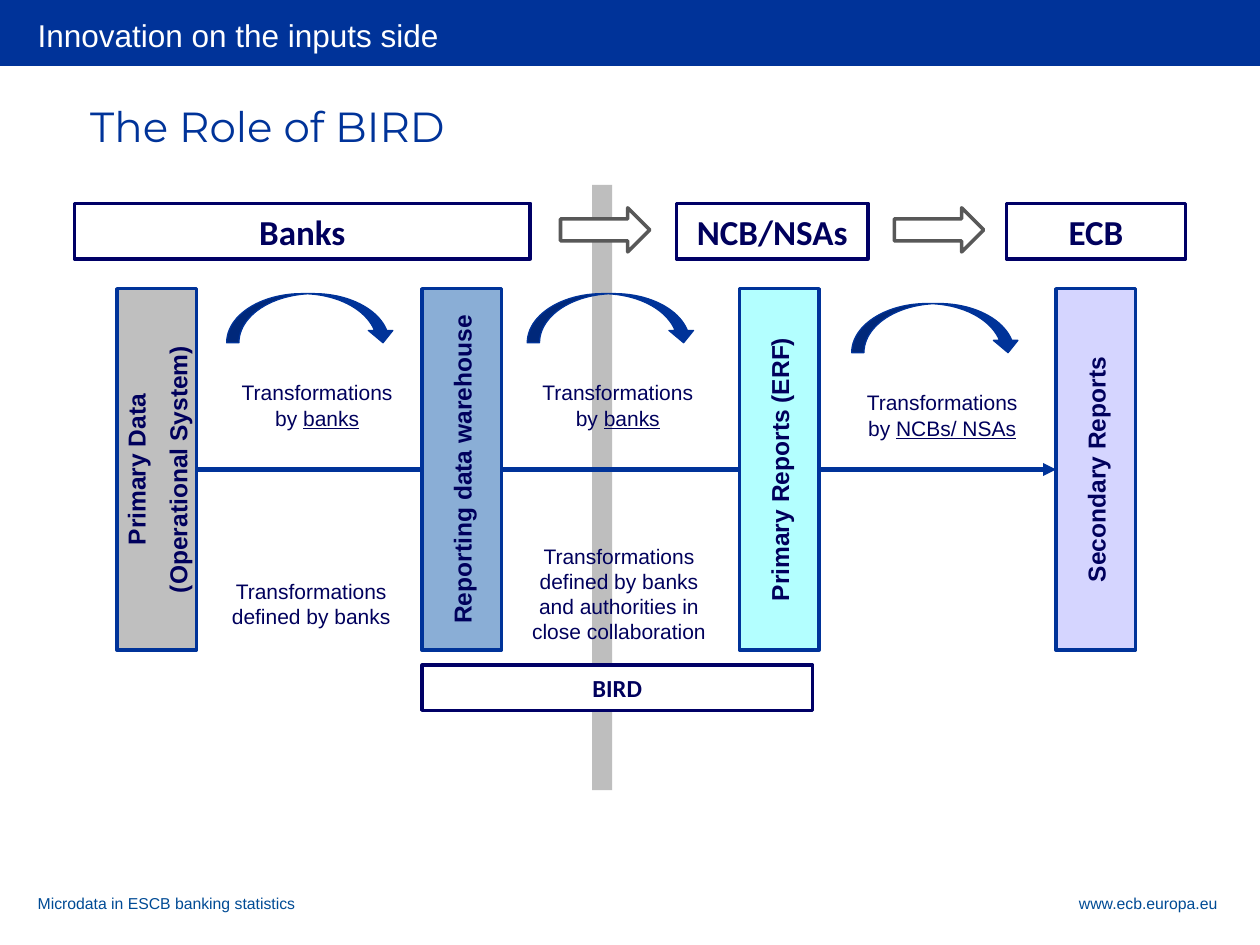
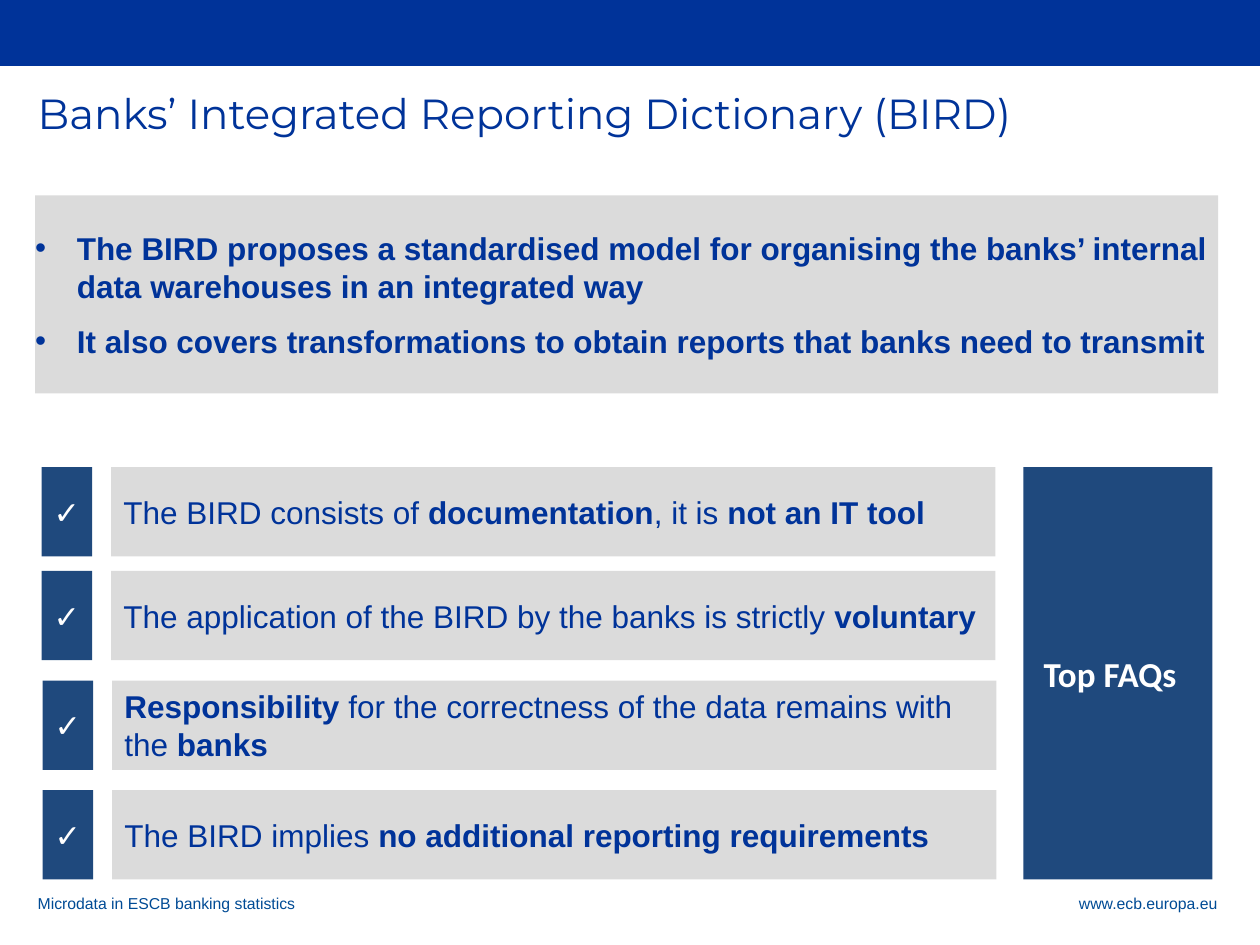
import dataclasses

import pptx
import pptx.dml.color
import pptx.enum.shapes
import pptx.enum.text
import pptx.oxml.ns
import pptx.util
from lxml import etree

Cm = pptx.util.Cm
Pt = pptx.util.Pt
Color = pptx.dml.color.RGBColor
Preset = pptx.enum.shapes.MSO_SHAPE
Align = pptx.enum.text.PP_ALIGN
Anchor = pptx.enum.text.MSO_ANCHOR
qn = pptx.oxml.ns.qn

WHITE = Color(0xFF, 0xFF, 0xFF)
BLUE = Color(0x00, 0x33, 0x99)
FOOTER_BLUE = Color(0x00, 0x4B, 0x95)
INK = Color(0x00, 0x00, 0x5C)
FRAME_NAVY = Color(0x00, 0x00, 0x66)
FAQ_NAVY = Color(0x1F, 0x49, 0x7D)
PANEL_GREY = Color(0xDB, 0xDB, 0xDB)
DIVIDER_GREY = Color(0xBE, 0xBE, 0xBE)
ARROW_GREY = Color(0x58, 0x58, 0x58)
PRIMARY_GREY = Color(0xBF, 0xBF, 0xBF)
WAREHOUSE_BLUE = Color(0x8A, 0xAE, 0xD6)
REPORT_CYAN = Color(0xB3, 0xFF, 0xFF)
SECONDARY_LILAC = Color(0xD5, 0xD5, 0xFF)

BODY_FONT = "Arial"
LABEL_FONT = "Calibri"
TITLE_FONT = "Montserrat"
NO_INSETS = (0, 0, 0, 0)
TEXT_INSETS = (0.25, 0.13, 0.25, 0.13)


@dataclasses.dataclass
class Box:
    left: float
    top: float
    width: float
    height: float

    def area(self, left, top, width, height):
        return Box(self.left + left, self.top + top, width, height)

    def lengths(self):
        return [Cm(value) for value in dataclasses.astuple(self)]


def add_text(shape, text, size=18, color=BLUE, font=BODY_FONT, bold=False,
             emphasis="bold", align=Align.LEFT, anchor=Anchor.MIDDLE,
             insets=TEXT_INSETS, wrap=True, spacing=None, gap=0, bullet=None):
    frame = shape.text_frame
    frame.word_wrap = wrap
    frame.vertical_anchor = anchor
    (frame.margin_left, frame.margin_top,
     frame.margin_right, frame.margin_bottom) = [Cm(inset) for inset in insets]
    for index, line in enumerate(text.split("\n")):
        para = frame.add_paragraph() if index else frame.paragraphs[0]
        para.alignment = align
        para.line_spacing = spacing
        para.space_before = Pt(gap if index else 0)
        if bullet:
            add_bullet(para, bullet, color)
        for position, words in enumerate(line.split("*")):
            if not words:
                continue
            span = para.add_run()
            span.text = words
            span.font.name = font
            span.font.size = Pt(size)
            span.font.color.rgb = color
            emphasised = position % 2 == 1
            span.font.bold = bold or (emphasised and emphasis == "bold")
            span.font.underline = emphasised and emphasis == "underline"


def add_bullet(para, character, color):
    properties = para._p.get_or_add_pPr()
    properties.set("marL", str(Cm(0.84)))
    properties.set("indent", str(-Cm(0.84)))
    bullet_color = etree.SubElement(properties, qn("a:buClr"))
    etree.SubElement(bullet_color, qn("a:srgbClr")).set("val", str(color))
    etree.SubElement(properties, qn("a:buFont")).set("typeface", BODY_FONT)
    etree.SubElement(properties, qn("a:buChar")).set("char", character)


def add_block(page, box, fill, line=None, weight=2, preset=Preset.RECTANGLE):
    shape = page.shapes.add_shape(preset, *box.lengths())
    shape.shadow.inherit = False
    shape.fill.solid()
    shape.fill.fore_color.rgb = fill
    if line is None:
        shape.line.fill.background()
    else:
        shape.line.color.rgb = line
        shape.line.width = Pt(weight)
    return shape


def add_label(page, box, text, **text_format):
    label = page.shapes.add_textbox(*box.lengths())
    add_text(label, text, **{"anchor": Anchor.TOP, **text_format})


def add_framed_label(page, box, text, size):
    block = add_block(page, box, WHITE, FRAME_NAVY)
    add_text(block, text, size=size, color=INK, font=LABEL_FONT, bold=True,
             align=Align.CENTER)


def add_flow_line(page):
    flow = page.shapes.add_connector(
        pptx.enum.shapes.MSO_CONNECTOR.STRAIGHT, 0, 0, 0, 0)
    flow.line.color.rgb = BLUE
    flow.line.width = Pt(2.5)
    properties = flow._element.spPr
    outline = properties.find(qn("a:ln"))
    etree.SubElement(outline, qn("a:tailEnd")).set("type", "triangle")
    etree.SubElement(properties, qn("a:effectLst"))
    return flow


def add_page(deck, box):
    page = deck.slides.add_slide(deck.slide_layouts[6])
    add_block(page, box.area(0, 0, box.width, 1.32), BLUE, BLUE, 0.75)
    footers = (
        ("Microdata in ESCB banking statistics", 0.76, 8.92, Align.LEFT),
        ("www.ecb.europa.eu", 18.16, 6.38, Align.RIGHT),
    )
    for text, left, width, align in footers:
        add_label(page, box.area(left, 17.98, width, 0.53), text, size=9,
                  color=FOOTER_BLUE, align=align, insets=NO_INSETS,
                  spacing=Pt(12))
    return page


def add_title(page, box, text, **text_format):
    add_label(page, box, text, size=24, font=TITLE_FONT, **text_format)


def draw_owners(page, box):
    owners = (("Banks", 0, 9.19), ("NCB/NSAs", 12.14, 3.86), ("ECB", 18.79, 3.61))
    for name, left, width in owners:
        add_framed_label(page, box.area(left, 0, width, box.height), name, 20)
    for left in (9.8, 16.53):
        add_block(page, box.area(left, 0.09, 1.8, 0.89), WHITE, ARROW_GREY,
                  preset=Preset.RIGHT_ARROW)


def draw_pillars(page, box):
    flow = add_flow_line(page)
    stages = (
        ("Primary Data\n(Operational System)", 0, PRIMARY_GREY),
        ("Reporting data warehouse", 6.15, WAREHOUSE_BLUE),
        ("Primary Reports (ERF)", 12.55, REPORT_CYAN),
        ("Secondary Reports", 18.93, SECONDARY_LILAC),
    )
    pillars = []
    for text, left, fill in stages:
        pillar = add_block(page, box.area(left, 0, 1.6, box.height), fill, BLUE)
        add_text(pillar, text, size=14, color=INK, bold=True,
                 align=Align.CENTER, wrap=False, gap=7)
        pillar.text_frame._txBody.bodyPr.set("vert", "vert270")
        pillars.append(pillar)
    flow.begin_connect(pillars[0], 3)
    flow.end_connect(pillars[-1], 1)


def draw_transformations(page, box):
    label_format = dict(size=12, color=INK, emphasis="underline",
                        align=Align.CENTER)
    steps = (("banks", 0, 0), ("banks", 6.06, 0), ("NCBs/ NSAs", 12.6, 0.2))
    for actor, left, drop in steps:
        arc = add_block(page, box.area(left, drop, 3.4, 0.99), BLUE, BLUE, 0.75,
                        Preset.CURVED_DOWN_ARROW)
        for index, value in enumerate((0.25, 0.5, 0.25)):
            arc.adjustments[index] = value
        add_label(page, box.area(left - 0.08, drop + 1.61, 3.81, 1.3),
                  f"Transformations by *{actor}*", **label_format)
    add_label(page, box.area(-0.2, 5.61, 3.81, 1.3),
              "Transformations defined by banks", **label_format)
    add_label(page, box.area(5.79, 4.9, 4.24, 2.31),
              "Transformations defined by banks and authorities in close "
              "collaboration", **label_format)


def draw_role_diagram(page, box):
    add_block(page, box.area(10.44, 0, 0.4, box.height), DIVIDER_GREY)
    draw_pillars(page, box.area(0.86, 2.09, 20.53, 7.29))
    draw_owners(page, box.area(0, 0.37, box.width, 1.12))
    draw_transformations(page, box.area(3.07, 2.19, 16, 7.21))
    add_framed_label(page, box.area(7.01, 9.68, 7.87, 0.91), "BIRD", 14)


def draw_summary(page, box):
    panel = add_block(page, box, PANEL_GREY)
    add_text(panel,
             "The BIRD proposes a standardised model for organising the banks’ "
             "internal data warehouses in an integrated way\n"
             "It also covers transformations to obtain reports that banks need "
             "to transmit",
             bold=True, insets=NO_INSETS, gap=10, bullet="•")


def draw_faqs(page, box):
    answers = (
        (0, 0, "The BIRD consists of *documentation*, it is *not an IT tool*"),
        (0, 2.09, "The application of the BIRD by the banks is strictly "
                  "*voluntary*"),
        (0.02, 4.3, "*Responsibility* for the correctness of the data remains "
                    "with the *banks*"),
        (0.02, 6.51, "The BIRD implies *no additional reporting requirements*"),
    )
    for left, top, answer in answers:
        panel = add_block(page, box.area(left + 1.4, top, 17.83, 1.8), PANEL_GREY)
        add_text(panel, answer)
        check = add_block(page, box.area(left, top, 1.02, 1.8), FAQ_NAVY)
        add_text(check, "✓", color=WHITE, align=Align.CENTER, insets=NO_INSETS)
    banner = add_block(page, box.area(19.79, 0, 3.81, box.height), FAQ_NAVY)
    add_text(banner, "Top FAQs", size=20, color=WHITE, font=LABEL_FONT,
             bold=True, insets=(0.41, 0.13, 0.25, 0.13))


def build_role_page(deck, box):
    page = add_page(deck, box)
    add_label(page, box.area(0.76, 0.33, 23.75, 0.99),
              "Innovation on the inputs side", color=WHITE, insets=NO_INSETS)
    add_title(page, box.area(1.57, 1.93, 21.67, 1.22), "The Role of BIRD",
              anchor=Anchor.MIDDLE)
    draw_role_diagram(page, box.area(1.5, 3.73, 22.4, 12.2))


def build_dictionary_page(deck, box):
    page = add_page(deck, box)
    add_title(page, box.area(0.76, 1.83, 23.88, 1.75),
              "Banks’ Integrated Reporting Dictionary (BIRD)",
              insets=NO_INSETS, spacing=Pt(27))
    draw_summary(page, box.area(0.71, 3.94, 23.85, 3.99))
    draw_faqs(page, box.area(0.84, 9.42, 23.6, 8.31))


def main():
    deck = pptx.Presentation()
    canvas = Box(0, 0, 25.4, 19.05)
    deck.slide_width = Cm(canvas.width)
    deck.slide_height = Cm(canvas.height)
    build_role_page(deck, canvas)
    build_dictionary_page(deck, canvas)
    deck.save("out.pptx")


if __name__ == "__main__":
    main()
